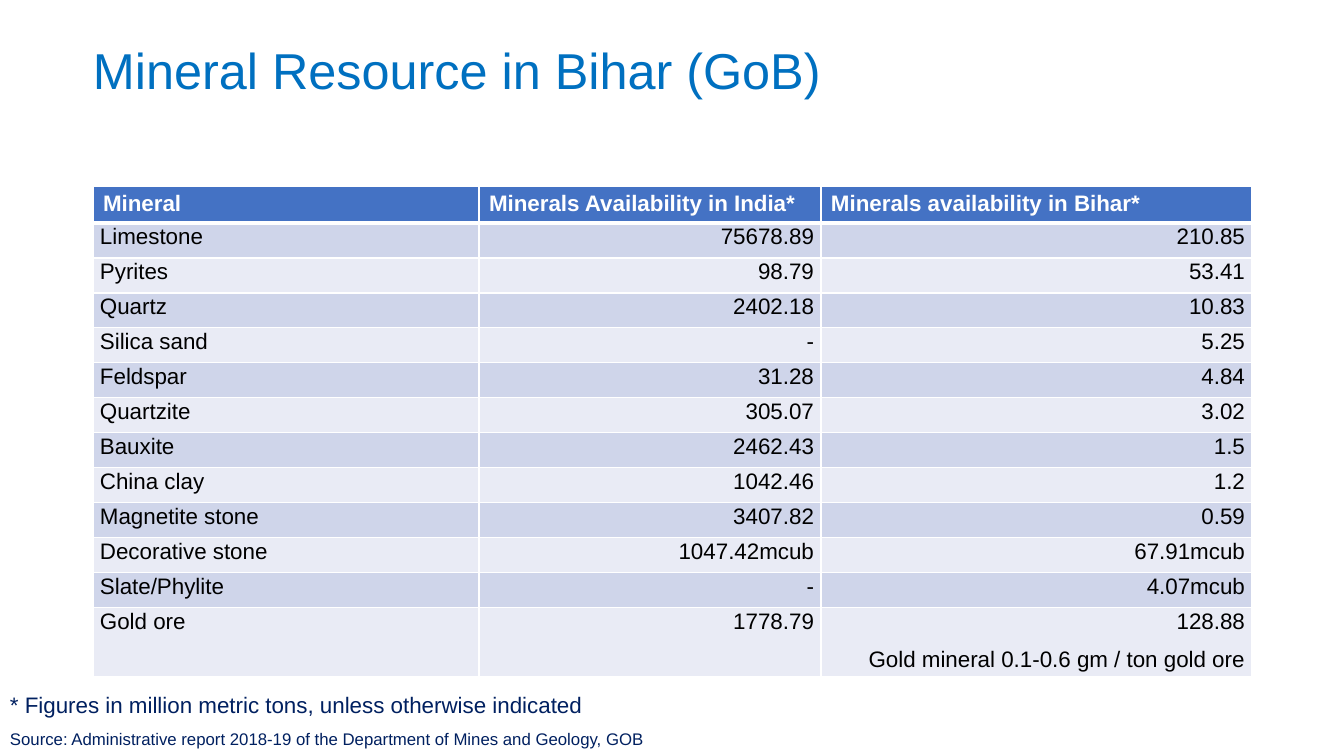
from lxml import etree
from pptx import Presentation
from pptx.dml.color import RGBColor
from pptx.enum import text
from pptx.oxml import ns
from pptx import util as u

PX_PER_INCH = 100.8
FONT = "Arial"
COLORS = {
    "title": "0070C0",
    "note": "002060",
    "header": "4472C4",
    "band_dark": "CFD5EA",
    "band_light": "E9EBF5",
    "white": "FFFFFF",
    "black": "000000",
}
HEADINGS = ["Mineral", "Minerals Availability in India*", "Minerals availability in Bihar*"]
MINERALS = [
    ["Limestone", "75678.89", "210.85"],
    ["Pyrites", "98.79", "53.41"],
    ["Quartz", "2402.18", "10.83"],
    ["Silica sand", "-", "5.25"],
    ["Feldspar", "31.28", "4.84"],
    ["Quartzite", "305.07", "3.02"],
    ["Bauxite", "2462.43", "1.5"],
    ["China clay", "1042.46", "1.2"],
    ["Magnetite stone", "3407.82", "0.59"],
    ["Decorative stone", "1047.42mcub", "67.91mcub"],
    ["Slate/Phylite", "-", "4.07mcub"],
    ["Gold ore", "1778.79", "128.88\nGold mineral 0.1-0.6 gm / ton gold ore"],
]
COLUMN_WIDTHS = [386, 342, 431]
ROW_HEIGHT = 35
LAST_ROW_HEIGHT = 57


def px(length):
    return u.Inches(length / PX_PER_INCH)


def rgb(name):
    return RGBColor.from_string(COLORS[name])


def write_text(frame, content, size=16, color="black", bold=False,
               align=text.PP_ALIGN.LEFT, line_spacing=None, space_after=None):
    for index, line in enumerate(content.split("\n")):
        paragraph = frame.add_paragraph() if index else frame.paragraphs[0]
        paragraph.alignment = align
        if line_spacing is not None:
            paragraph.line_spacing = line_spacing
        if space_after is not None:
            paragraph.space_after = u.Pt(space_after)
        run = paragraph.add_run()
        run.text = line
        run.font.name = FONT
        run.font.size = u.Pt(size)
        run.font.bold = bold
        run.font.color.rgb = rgb(color)


def add_text_box(slide, box, content, anchor=text.MSO_ANCHOR.TOP, **text_format):
    frame = slide.shapes.add_textbox(*map(px, box)).text_frame
    frame.word_wrap = True
    frame.vertical_anchor = anchor
    write_text(frame, content, **text_format)


def set_borders(cell, top=1, bottom=1):
    properties = cell._tc.get_or_add_tcPr()
    for side, points in (("L", 1), ("R", 1), ("T", top), ("B", bottom)):
        line = etree.SubElement(properties, ns.qn(f"a:ln{side}"), w=str(u.Pt(points)))
        fill = etree.SubElement(line, ns.qn("a:solidFill"))
        etree.SubElement(fill, ns.qn("a:srgbClr"), val=COLORS["white"])


def fill_cell(cell, color):
    cell.fill.solid()
    cell.fill.fore_color.rgb = rgb(color)


def format_header_cell(cell, content):
    set_borders(cell, bottom=3)
    fill_cell(cell, "header")
    write_text(cell.text_frame, content, color="white", bold=True)


def format_body_cell(cell, content, row, column):
    set_borders(cell, top=3 if row == 1 else 1)
    fill_cell(cell, "band_dark" if row % 2 else "band_light")
    cell.margin_left = cell.margin_right = px(7)
    cell.margin_top = cell.margin_bottom = 0
    align = text.PP_ALIGN.RIGHT if column else text.PP_ALIGN.LEFT
    write_text(cell.text_frame, content, align=align, line_spacing=1.07, space_after=8)


def add_mineral_table(slide, left, top):
    row_heights = [ROW_HEIGHT] * len(MINERALS) + [LAST_ROW_HEIGHT]
    table = slide.shapes.add_table(
        len(row_heights), len(COLUMN_WIDTHS), px(left), px(top),
        px(sum(COLUMN_WIDTHS)), px(sum(row_heights))).table
    for column, width in zip(table.columns, COLUMN_WIDTHS):
        column.width = px(width)
    for row, height in zip(table.rows, row_heights):
        row.height = px(height)
    for column, heading in enumerate(HEADINGS):
        format_header_cell(table.cell(0, column), heading)
    for row, values in enumerate(MINERALS, start=1):
        for column, value in enumerate(values):
            format_body_cell(table.cell(row, column), value, row, column)


def main():
    presentation = Presentation()
    presentation.slide_width = px(1344)
    presentation.slide_height = px(756)
    slide = presentation.slides.add_slide(presentation.slide_layouts[6])
    add_text_box(slide, (83, 0, 1159, 146), "Mineral Resource in Bihar (GoB)",
                 anchor=text.MSO_ANCHOR.MIDDLE, size=36, color="title", line_spacing=0.9)
    add_mineral_table(slide, 93, 186)
    add_text_box(slide, (0, 724, 662, 30),
                 "Source: Administrative report 2018-19 of the Department of Mines and Geology, GOB",
                 size=12, color="note")
    add_text_box(slide, (0, 686, 600, 37),
                 "* Figures in million metric tons, unless otherwise indicated", color="note")
    presentation.save("out.pptx")


if __name__ == "__main__":
    main()
